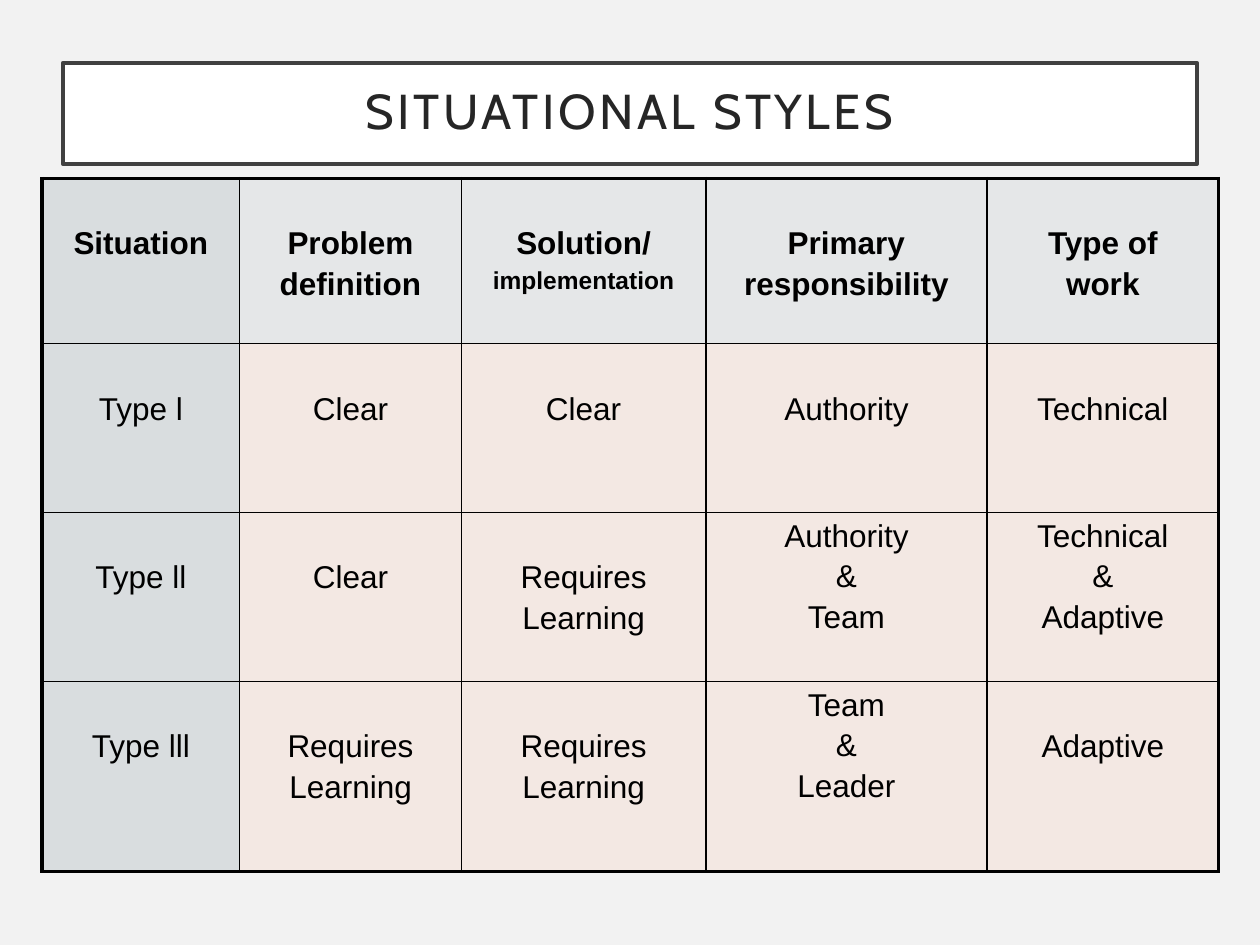
from dataclasses import dataclass

from lxml.etree import SubElement
from pptx import Presentation
from pptx.dml.color import RGBColor
from pptx.enum.shapes import MSO_SHAPE
from pptx.enum.text import MSO_ANCHOR, PP_ALIGN
from pptx.oxml import parse_xml
from pptx.oxml.ns import nsdecls, qn
from pptx.util import Pt


@dataclass(frozen=True)
class Theme:
    back: str = "F2F2F2"
    panel: str = "FFFFFF"
    frame: str = "404040"
    title: str = "262626"
    ink: str = "000000"
    head: str = "D9DDDF"
    body: str = "F5E0D5"
    title_font: str = "Cabin"
    font: str = "Arial"
    title_size: float = 28
    size: float = 18
    small: float = 14
    thick: float = 2.25
    thin: float = 1


THEME = Theme()
COLS = [113, 126.6, 139.8, 160.6, 132.5]
ROWS = [94.4, 96.5, 96.5, 108.7]
GRID = [
    ["Situation", "Problem\ndefinition", "Solution/\nimplementation",
     "Primary\nresponsibility", "Type of\nwork"],
    ["Type l", "Clear", "Clear", "Authority", "Technical"],
    ["Type ll", "Clear", "Requires\nLearning", "Authority\n&\nTeam",
     "Technical\n&\nAdaptive"],
    ["Type lll", "Requires\nLearning", "Requires\nLearning",
     "Team\n&\nLeader", "Adaptive"],
]


def paint(fill, color, alpha=None):
    """Solid fill, with opacity in percent if given."""
    fill.solid()
    fill.fore_color.rgb = RGBColor.from_string(color)
    if alpha is not None:
        tint = fill._xPr.find(qn("a:solidFill"))[0]
        SubElement(tint, qn("a:alpha"), val=str(alpha * 1000))


def write(frame, text, font=THEME.font, size=THEME.size, color=THEME.ink,
          bold=False, gap=3, lead=None, track=None, sizes=None):
    """Centred text, one paragraph a line; sizes overrides by line text."""
    for i, line in enumerate(text.split("\n")):
        para = frame.add_paragraph() if i else frame.paragraphs[0]
        para.alignment = PP_ALIGN.CENTER
        para.space_before = Pt(gap if i else 0)
        if lead:
            para.line_spacing = lead
        run = para.add_run()
        run.text = line
        run.font.name = font
        run.font.size = Pt((sizes or {}).get(line, size))
        run.font.bold = bold
        run.font.color.rgb = RGBColor.from_string(color)
        if track:
            run.font._element.set("spc", str(track * 100))


def border(cell, **widths):
    """Cell borders by side: L, R, T, B."""
    props = cell._tc.get_or_add_tcPr()
    for i, side in enumerate("LRTB"):
        props.insert(i, parse_xml(
            f'<a:ln{side} {nsdecls("a")} w="{Pt(widths[side])}">'
            f'<a:solidFill><a:srgbClr val="{THEME.ink}"/></a:solidFill>'
            f'</a:ln{side}>'))


def add_title(slide, text):
    box = slide.shapes.add_shape(
        MSO_SHAPE.RECTANGLE, Pt(36), Pt(36), Pt(648), Pt(57.6))
    box.shadow.inherit = False
    paint(box.fill, THEME.panel)
    box.line.color.rgb = RGBColor.from_string(THEME.frame)
    box.line.width = Pt(2.5)
    frame = box.text_frame
    frame.word_wrap = True
    frame.vertical_anchor = MSO_ANCHOR.MIDDLE
    frame.margin_left = frame.margin_right = Pt(14.4)
    frame.margin_top = frame.margin_bottom = Pt(14.4)
    write(frame, text, font=THEME.title_font, size=THEME.title_size,
          color=THEME.title, lead=0.9, track=2)


def fill_cell(cell, text, row, col):
    # Short texts start one line lower than the three-line ones
    cell.margin_top = Pt(3.6 if text.count("\n") == 2 else 27.3)
    cell.vertical_anchor = MSO_ANCHOR.TOP
    write(cell.text_frame, text, bold=row == 0,
          sizes={"implementation": THEME.small})
    tone = THEME.body if row and col else THEME.head
    paint(cell.fill, tone, 50 if col else None)
    edges = {"L": col == 0, "R": col == len(COLS) - 1,
             "T": row == 0, "B": row == len(ROWS) - 1}
    border(cell, **{side: THEME.thick if outer else THEME.thin
                    for side, outer in edges.items()})


def add_grid(slide):
    table = slide.shapes.add_table(
        len(ROWS), len(COLS), Pt(24), Pt(102),
        Pt(sum(COLS)), Pt(sum(ROWS))).table
    table.first_row = table.horz_banding = False
    for col, width in zip(table.columns, COLS):
        col.width = Pt(width)
    for row, height in zip(table.rows, ROWS):
        row.height = Pt(height)
    for r, texts in enumerate(GRID):
        for c, text in enumerate(texts):
            fill_cell(table.cell(r, c), text, r, c)


def main():
    deck = Presentation()
    deck.slide_width, deck.slide_height = Pt(720), Pt(540)
    slide = deck.slides.add_slide(deck.slide_layouts[6])
    paint(slide.background.fill, THEME.back)
    add_title(slide, "SITUATIONAL STYLES")
    add_grid(slide)
    deck.save("out.pptx")


if __name__ == "__main__":
    main()
